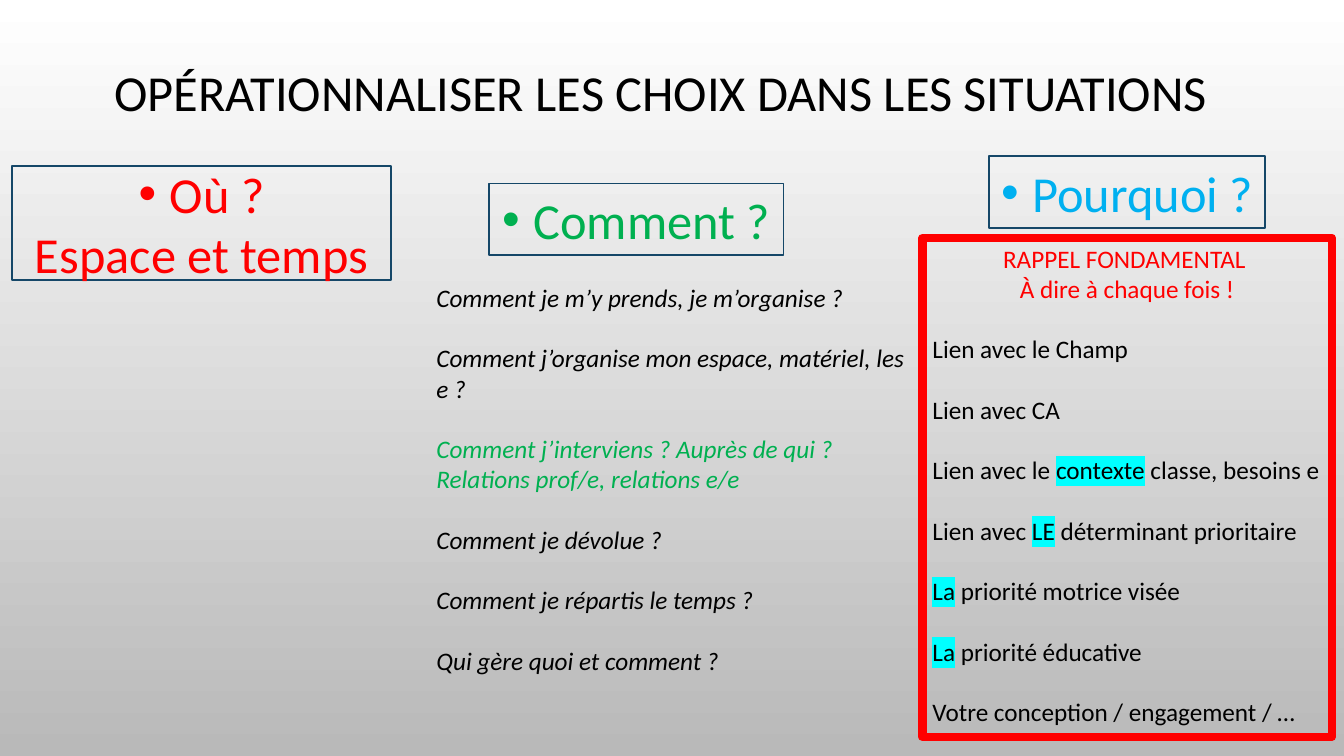
from lxml.etree import SubElement
from pptx import Presentation
from pptx.dml.color import RGBColor
from pptx.enum.shapes import MSO_SHAPE
from pptx.enum.text import MSO_ANCHOR, PP_ALIGN
from pptx.oxml.ns import qn
from pptx.util import Inches, Pt

BLACK, RED, GREEN, BLUE = "000000", "FF0000", "00B050", "00B0F0"
NAVY, CYAN = "154768", "00FFFF"
BLANK_LINE = 21.6


def rgb(code):
    return RGBColor.from_string(code)


def add_bullet(paragraph):
    props = paragraph._p.get_or_add_pPr()
    props.set("marL", str(Inches(0.31)))
    props.set("indent", str(-Inches(0.31)))
    SubElement(props, qn("a:buFont"), typeface="Arial")
    SubElement(props, qn("a:buChar"), char="•")


def highlight(run, color):
    mark = SubElement(run._r.rPr, qn("a:highlight"))
    SubElement(mark, qn("a:srgbClr"), val=color)
    run._r.rPr.find(qn("a:solidFill")).addnext(mark)


def write(frame, text, size=18, color=BLACK, italic=False, align=PP_ALIGN.LEFT,
          before=0, bullet=False, marked=None, spacing=None):
    paragraph = frame.paragraphs[0] if not frame.text else frame.add_paragraph()
    paragraph.alignment = align
    paragraph.space_before = Pt(before)
    if spacing:
        paragraph.line_spacing = spacing
    if bullet:
        add_bullet(paragraph)
    head, found, tail = text.partition(marked) if marked else (text, "", "")
    for part in filter(None, (head, found, tail)):
        run = paragraph.add_run()
        run.text = part
        run.font.color.rgb = rgb(color)
        if part == marked:
            highlight(run, CYAN)
        run.font.name = "Calibri"
        run.font.size = Pt(size)
        run.font.italic = italic


def add_frame(slide, left, top, width, height, line, weight, anchor):
    box = slide.shapes.add_shape(MSO_SHAPE.RECTANGLE, Inches(left), Inches(top),
                                 Inches(width), Inches(height))
    box.shadow.inherit = False
    box.fill.background()
    box.line.color.rgb = rgb(line)
    box.line.width = Pt(weight)
    box.text_frame.word_wrap = True
    box.text_frame.vertical_anchor = anchor
    return box.text_frame


def add_question(slide, left, top, width, height, color, question, detail=None):
    frame = add_frame(slide, left, top, width, height, NAVY, 1.25, MSO_ANCHOR.MIDDLE)
    write(frame, question, size=36, color=color, align=PP_ALIGN.CENTER, bullet=True)
    if detail:
        write(frame, detail, size=36, color=color, align=PP_ALIGN.CENTER)


def add_title(slide, text):
    title = slide.shapes.title
    title.left, title.top = Inches(0.89), Inches(0.34)
    title.width, title.height = Inches(11.33), Inches(1.75)
    frame = title.text_frame
    frame.word_wrap = True
    frame.vertical_anchor = MSO_ANCHOR.MIDDLE
    frame.margin_bottom = Inches(0.6)
    write(frame, text, size=36, align=PP_ALIGN.CENTER, spacing=0.9)


def add_methods(slide):
    box = slide.shapes.add_textbox(Inches(4.23), Inches(2.75), Inches(4.97), Inches(4.34))
    frame = box.text_frame
    frame.word_wrap = True
    for text, color, before in (
        ("Comment je m’y prends, je m’organise ?", BLACK, 0),
        ("Comment j’organise mon espace, matériel, les e ?", BLACK, BLANK_LINE),
        ("Comment j’interviens ? Auprès de qui ?", GREEN, BLANK_LINE),
        ("Relations prof/e, relations e/e", GREEN, 0),
        ("Comment je dévolue ?", BLACK, BLANK_LINE),
        ("Comment je répartis le temps ?", BLACK, BLANK_LINE),
        ("Qui gère quoi et comment ?", BLACK, BLANK_LINE),
    ):
        write(frame, text, color=color, italic=True, before=before)


def add_reasons(slide):
    frame = add_frame(slide, 9.15, 2.36, 4.06, 4.95, RED, 6, MSO_ANCHOR.TOP)
    for reminder in ("RAPPEL FONDAMENTAL ", "À dire à chaque fois !"):
        write(frame, reminder, color=RED, align=PP_ALIGN.CENTER)
    for reason, marked in (
        ("Lien avec le Champ", None),
        ("Lien avec CA", None),
        ("Lien avec le contexte classe, besoins e", "contexte"),
        ("Lien avec LE déterminant prioritaire", "LE"),
        ("La priorité motrice visée", "La"),
        ("La priorité éducative", "La"),
        ("Votre conception / engagement / …", None),
    ):
        write(frame, reason, before=BLANK_LINE, marked=marked)


def paint_background(slide):
    fill = slide.background.fill
    fill.gradient()
    fill.gradient_angle = 270
    for stop, color in zip(fill.gradient_stops, ("FFFFFF", "B9B9B9")):
        stop.color.rgb = rgb(color)


def main():
    deck = Presentation()
    deck.slide_width, deck.slide_height = Inches(13.33), Inches(7.5)
    slide = deck.slides.add_slide(deck.slide_layouts[5])
    paint_background(slide)
    add_title(slide, "OPÉRATIONNALISER LES CHOIX DANS LES SITUATIONS")
    add_question(slide, 4.85, 1.82, 2.92, 0.71, GREEN, "Comment ?")
    add_question(slide, 9.81, 1.55, 2.74, 0.71, BLUE, "Pourquoi ?")
    add_methods(slide)
    add_reasons(slide)
    add_question(slide, 0.12, 1.65, 3.76, 1.13, RED, "Où ?", "Espace et temps")
    deck.save("out.pptx")


if __name__ == "__main__":
    main()
